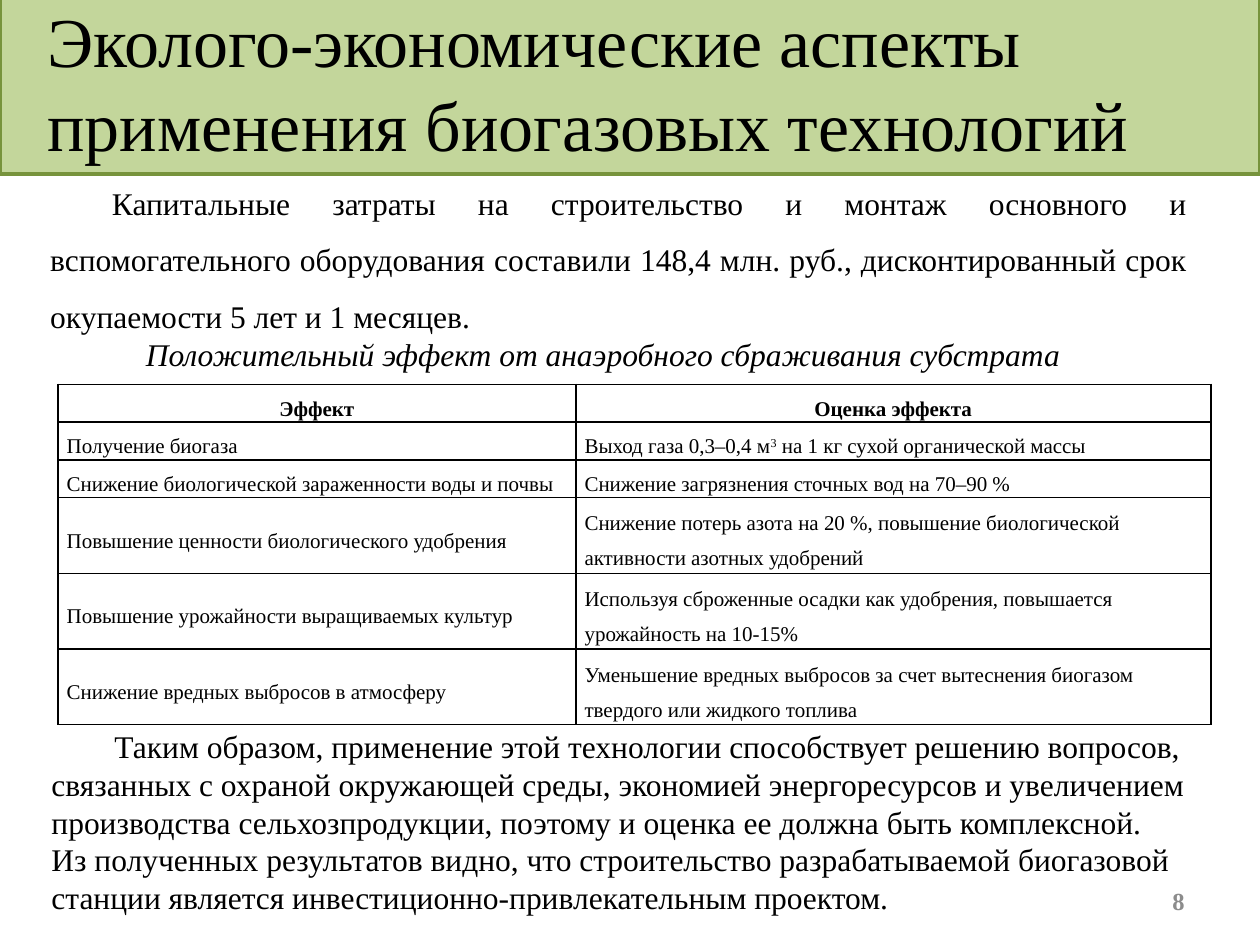
from dataclasses import dataclass
from typing import Any

import lxml.etree
import pptx
import pptx.dml.color
import pptx.enum.shapes
import pptx.enum.text
import pptx.oxml.ns
import pptx.util

Inches = pptx.util.Inches
Pt = pptx.util.Pt
RGB = pptx.dml.color.RGBColor
ALIGN = pptx.enum.text.PP_ALIGN
ANCHOR = pptx.enum.text.MSO_ANCHOR
qn = pptx.oxml.ns.qn


@dataclass(frozen=True)
class Theme:
    font: str = "Times New Roman"
    ink: RGB = RGB(0x00, 0x00, 0x00)
    muted: RGB = RGB(0x8C, 0x8C, 0x8C)
    band: RGB = RGB(0xC3, 0xD6, 0x9B)
    band_line: RGB = RGB(0x77, 0x93, 0x3C)
    title: int = 40
    body: int = 18
    number: int = 14
    cell: int = 12


THEME = Theme()


@dataclass(frozen=True)
class Style:
    size: int
    color: RGB = THEME.ink
    bold: bool = False
    italic: bool = False
    align: Any = ALIGN.LEFT
    spacing: float = 1.0


@dataclass(frozen=True)
class TextBox:
    box: tuple[float, float, float, float]
    style: Style
    paragraphs: tuple[str, ...]
    first_indent: float = 0
    wrap: bool = True
    anchor: Any = ANCHOR.TOP


@dataclass(frozen=True)
class Row:
    effect: str
    estimate: str
    lines: int = 1


TEXTS = (
    TextBox((7.17, 6.95, 2.33, 0.4),
            Style(THEME.number, THEME.muted, bold=True, align=ALIGN.RIGHT),
            ("8",), anchor=ANCHOR.MIDDLE),
    TextBox((0.28, -0.07, 8.87, 1.45), Style(THEME.title),
            ("Эколого-экономические аспекты", "применения биогазовых технологий"),
            wrap=False),
    TextBox((1.06, 2.61, 7.95, 0.4), Style(THEME.body, italic=True),
            ("Положительный эффект от анаэробного сбраживания субстрата",)),
    TextBox((0.31, 5.72, 9.45, 1.62), Style(THEME.body),
            ("Таким образом, применение этой технологии способствует решению вопросов, "
             "связанных с охраной окружающей среды, экономией энергоресурсов и увеличением "
             "производства сельхозпродукции, поэтому и оценка ее должна быть комплексной.",
             "Из полученных результатов видно, что строительство разрабатываемой биогазовой "
             "станции является инвестиционно-привлекательным проектом."),
            first_indent=0.5),
    TextBox((0.3, 1.26, 9.22, 1.46),
            Style(THEME.body, align=ALIGN.JUSTIFY, spacing=1.5),
            ("Капитальные затраты на строительство и монтаж основного и вспомогательного "
             "оборудования составили 148,4 млн. руб., дисконтированный срок окупаемости "
             "5 лет и 1 месяцев.",),
            first_indent=0.49),
)

ROWS = (
    Row("Эффект", "Оценка эффекта"),
    Row("Получение биогаза", "Выход газа 0,3–0,4 м^3^ на 1 кг сухой органической массы"),
    Row("Снижение биологической зараженности воды и почвы",
        "Снижение загрязнения сточных вод на 70–90 %"),
    Row("Повышение ценности биологического удобрения",
        "Снижение потерь азота на 20 %, повышение биологической активности азотных удобрений", 2),
    Row("Повышение урожайности выращиваемых культур",
        "Используя сброженные осадки как удобрения, повышается урожайность на 10-15%", 2),
    Row("Снижение вредных выбросов в атмосферу",
        "Уменьшение вредных выбросов за счет вытеснения биогазом твердого или жидкого топлива", 2),
)
COLUMNS = (4.11, 5.04)
LINE_HEIGHT = 0.3


def set_all(target: Any, values: dict[str, Any]) -> None:
    for name, value in values.items():
        setattr(target, name, value)


def write(p: Any, text: str, style: Style) -> None:
    set_all(p, {"alignment": style.align, "line_spacing": style.spacing})
    for i, part in enumerate(text.split("^")):
        r = p.add_run()
        r.text = part
        set_all(r.font, {"name": THEME.font, "size": Pt(style.size),
                         "bold": style.bold, "italic": style.italic})
        r.font.color.rgb = style.color
        if i % 2:
            r.font._element.set("baseline", "30000")


def add_band(s: Any) -> None:
    sp = s.shapes.add_shape(pptx.enum.shapes.MSO_SHAPE.RECTANGLE,
                            Inches(0), Inches(-0.03), Inches(10), Inches(1.41))
    sp.shadow.inherit = False
    sp.fill.solid()
    sp.fill.fore_color.rgb = THEME.band
    sp.line.color.rgb = THEME.band_line
    sp.line.width = Pt(2)


def add_text(s: Any, item: TextBox) -> None:
    tf = s.shapes.add_textbox(*map(Inches, item.box)).text_frame
    set_all(tf, {"word_wrap": item.wrap, "vertical_anchor": item.anchor})
    for i, text in enumerate(item.paragraphs):
        p = tf.add_paragraph() if i else tf.paragraphs[0]
        write(p, text, item.style)
        if item.first_indent and i == 0:
            p._p.get_or_add_pPr().set("indent", str(Inches(item.first_indent)))


def add_borders(cell: Any) -> None:
    pr = cell._tc.get_or_add_tcPr()
    for side in ("lnL", "lnR", "lnT", "lnB"):
        ln = lxml.etree.SubElement(pr, qn(f"a:{side}"), w=str(Pt(1)))
        fill = lxml.etree.SubElement(ln, qn("a:solidFill"))
        lxml.etree.SubElement(fill, qn("a:srgbClr"), val=str(THEME.ink))


def add_effects(s: Any) -> None:
    height = LINE_HEIGHT * sum(row.lines for row in ROWS)
    table = s.shapes.add_table(len(ROWS), len(COLUMNS), Inches(0.46), Inches(3.05),
                               Inches(sum(COLUMNS)), Inches(height)).table
    set_all(table, {"first_row": False, "horz_banding": False})
    for column, width in zip(table.columns, COLUMNS):
        column.width = Inches(width)
    header = Style(THEME.cell, bold=True, align=ALIGN.CENTER, spacing=1.5)
    body = Style(THEME.cell, spacing=1.5)
    for i, row in enumerate(ROWS):
        table.rows[i].height = Inches(LINE_HEIGHT * row.lines)
        for j, text in enumerate((row.effect, row.estimate)):
            cell = table.cell(i, j)
            set_all(cell, {"margin_left": Inches(0.07), "margin_right": Inches(0.07),
                           "margin_top": 0, "margin_bottom": 0,
                           "vertical_anchor": ANCHOR.MIDDLE})
            add_borders(cell)
            cell.fill.background()
            write(cell.text_frame.paragraphs[0], text, body if i else header)


def main() -> None:
    prs = pptx.Presentation()
    set_all(prs, {"slide_width": Inches(10), "slide_height": Inches(7.5)})
    s = prs.slides.add_slide(prs.slide_layouts[6])
    add_band(s)
    add_effects(s)
    for item in TEXTS:
        add_text(s, item)
    prs.save("out.pptx")


if __name__ == "__main__":
    main()
